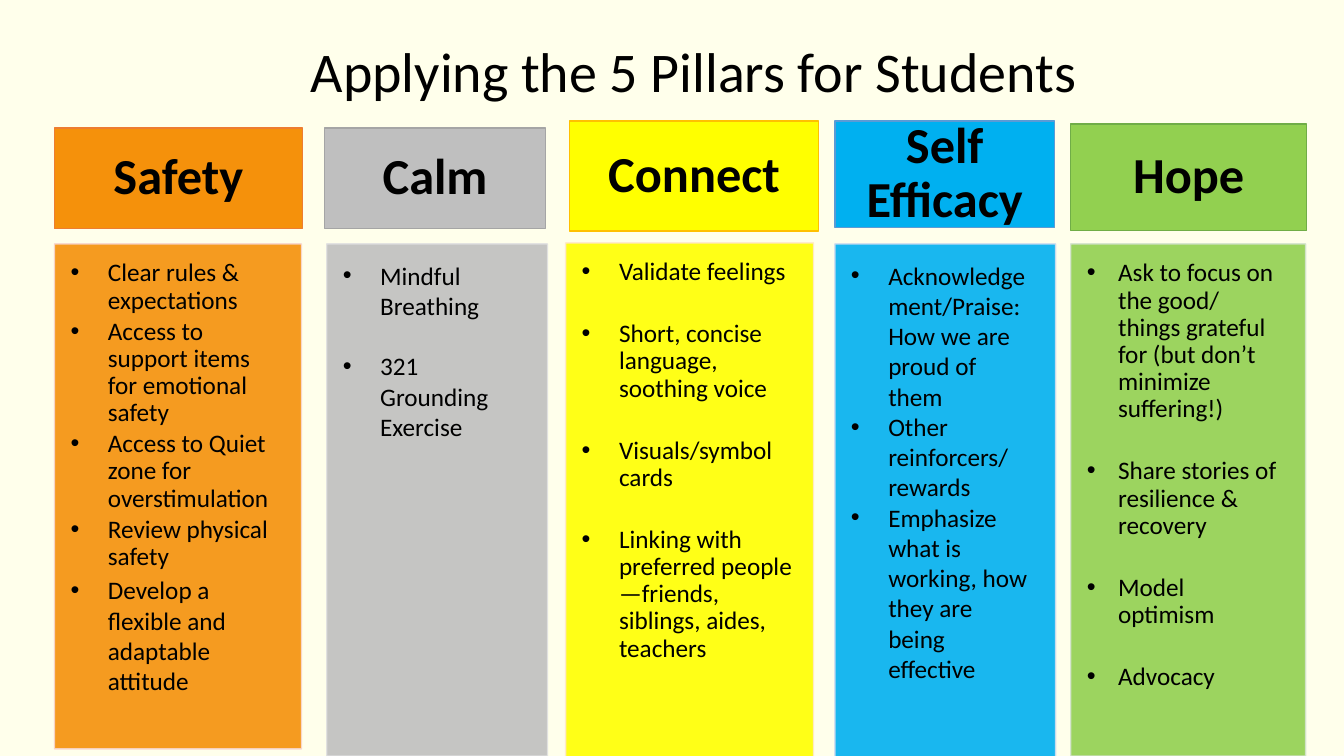
"""Build the slide that applies the five pillars to students."""
import lxml.etree
import pptx
import pptx.dml.color
import pptx.enum.shapes
import pptx.enum.text
import pptx.oxml.ns
import pptx.util

Inches = pptx.util.Inches
Pt = pptx.util.Pt
ALIGN = pptx.enum.text.PP_ALIGN
ANCHOR = pptx.enum.text.MSO_ANCHOR

TITLE = "Applying the 5 Pillars for Students"
TIGHT, LOOSE = 0.9, 1.0
SMALL_GAP, TIGHT_BLANK, LOOSE_BLANK = 2.7, 24.8, 21.6
HEADER_INSETS = (0.29, 0.17, 0.29, 0.17)
NARROW_INSETS = (0.27, 0.15, 0.27, 0.15)
BODY_INSETS = (0.16, 0.16, 0.21, 0.23)

PILLARS = [
    {"name": "Safety", "fill": "F5910B", "lines": ("ED7D31", "F8D7CE"),
     "header": (0.54, 1.27, 2.46, 1.0), "body": (0.54, 2.42, 2.45, 5.01),
     "insets": HEADER_INSETS, "indent": 0.37, "after": SMALL_GAP,
     "bullets": [("Clear rules & expectations", TIGHT),
                 ("Access to support items for emotional safety", TIGHT),
                 ("Access to Quiet zone for overstimulation", TIGHT),
                 ("Review physical safety", TIGHT),
                 ("Develop a flexible and adaptable attitude", LOOSE)]},
    {"name": "Calm", "fill": "BFBFBF", "lines": ("A5A5A5", "E1E1E1"),
     "header": (3.22, 1.27, 2.19, 1.0), "body": (3.24, 2.42, 2.19, 5.08),
     "insets": HEADER_INSETS, "indent": 0.37, "after": LOOSE_BLANK,
     "bullets": [("Mindful Breathing", LOOSE),
                 ("321 Grounding Exercise", LOOSE)]},
    {"name": "Connect", "fill": "FFFF00", "lines": ("FFC000", "FFE8CC"),
     "header": (5.65, 1.2, 2.47, 1.09), "body": (5.61, 2.41, 2.46, 5.13),
     "insets": HEADER_INSETS, "indent": 0.37, "after": TIGHT_BLANK,
     "bullets": [("Validate feelings", TIGHT),
                 ("Short, concise language, soothing voice", TIGHT),
                 ("Visuals/symbol cards", TIGHT),
                 ("Linking with preferred people—friends, siblings, aides, teachers", TIGHT)]},
    {"name": "Self Efficacy", "fill": "00B0F0", "lines": ("5B9BD5", "D2DEEF"),
     "header": (8.28, 1.2, 2.18, 1.06), "body": (8.28, 2.42, 2.19, 5.09),
     "insets": NARROW_INSETS, "indent": 0.37, "after": 0,
     "bullets": [("Acknowledgement/Praise: How we are proud of them", LOOSE),
                 ("Other reinforcers/ rewards", LOOSE),
                 ("Emphasize what is working, how they are being effective", LOOSE)]},
    {"name": "Hope", "fill": "92D050", "lines": ("70AD47", "D5E3CF"),
     "header": (10.62, 1.23, 2.34, 1.06), "body": (10.62, 2.42, 2.33, 5.08),
     "insets": HEADER_INSETS, "indent": 0.31, "after": TIGHT_BLANK,
     "bullets": [("Ask to focus on the good/ things grateful for (but don’t minimize suffering!)", TIGHT),
                 ("Share stories of resilience & recovery", TIGHT),
                 ("Model optimism", TIGHT),
                 ("Advocacy", TIGHT)]},
]


def color(value):
    return pptx.dml.color.RGBColor.from_string(value)


def add_child(parent, tag, **attributes):
    return lxml.etree.SubElement(parent, pptx.oxml.ns.qn(tag), attributes)


def write(para, text, size=18, bold=False, align=ALIGN.LEFT, spacing=1.0, after=0, indent=None):
    para.alignment = align
    para.line_spacing = spacing
    para.space_before = Pt(0)
    para.space_after = Pt(after)
    if indent:
        properties = para._p.get_or_add_pPr()
        properties.set("marL", str(Inches(indent)))
        properties.set("indent", str(-Inches(indent)))
        add_child(properties, "a:buFont", typeface="Arial")
        add_child(properties, "a:buChar", char="•")
    span = para.add_run()
    span.text = text
    span.font.name = "Calibri"
    span.font.size = Pt(size)
    span.font.bold = bold
    span.font.color.rgb = color("000000")


def place(shape, box):
    shape.left, shape.top, shape.width, shape.height = map(Inches, box)


def set_frame(frame, insets, anchor):
    frame.word_wrap = True
    frame.auto_size = pptx.enum.text.MSO_AUTO_SIZE.NONE
    frame.vertical_anchor = anchor
    frame.margin_left, frame.margin_top, frame.margin_right, frame.margin_bottom = map(Inches, insets)


def add_panel(page, box, fill, line, insets, anchor, opacity=100):
    panel = page.shapes.add_shape(pptx.enum.shapes.MSO_SHAPE.RECTANGLE, *map(Inches, box))
    panel.shadow.inherit = False
    panel.fill.solid()
    panel.fill.fore_color.rgb = color(fill)
    panel.line.color.rgb = color(line)
    panel.line.width = Pt(1)
    if opacity < 100:
        for tint in panel._element.spPr.iter(pptx.oxml.ns.qn("a:srgbClr")):
            add_child(tint, "a:alpha", val=str(opacity * 1000))
    set_frame(panel.text_frame, insets, anchor)
    return panel.text_frame


def add_pillar(page, pillar):
    header_line, body_line = pillar["lines"]
    header = add_panel(page, pillar["header"], pillar["fill"], header_line, pillar["insets"], ANCHOR.MIDDLE)
    write(header.paragraphs[0], pillar["name"], size=36, bold=True, align=ALIGN.CENTER, spacing=TIGHT)
    body = add_panel(page, pillar["body"], pillar["fill"], body_line, BODY_INSETS, ANCHOR.TOP, opacity=90)
    for index, (text, spacing) in enumerate(pillar["bullets"]):
        para = body.add_paragraph() if index else body.paragraphs[0]
        write(para, text, spacing=spacing, after=pillar["after"], indent=pillar["indent"])


def main():
    deck = pptx.Presentation()
    deck.slide_width, deck.slide_height = Inches(13.33), Inches(7.5)
    page = deck.slides.add_slide(deck.slide_layouts.get_by_name("Title Only"))
    page.background.fill.solid()
    page.background.fill.fore_color.rgb = color("FFFFEB")
    title = page.shapes.title
    place(title, (1.17, 0.31, 11.42, 0.77))
    set_frame(title.text_frame, (0.1, 0.05, 0.1, 0.05), ANCHOR.TOP)
    write(title.text_frame.paragraphs[0], TITLE, size=40, align=ALIGN.CENTER)
    for pillar in PILLARS:
        add_pillar(page, pillar)
    deck.save("out.pptx")


if __name__ == "__main__":
    main()
